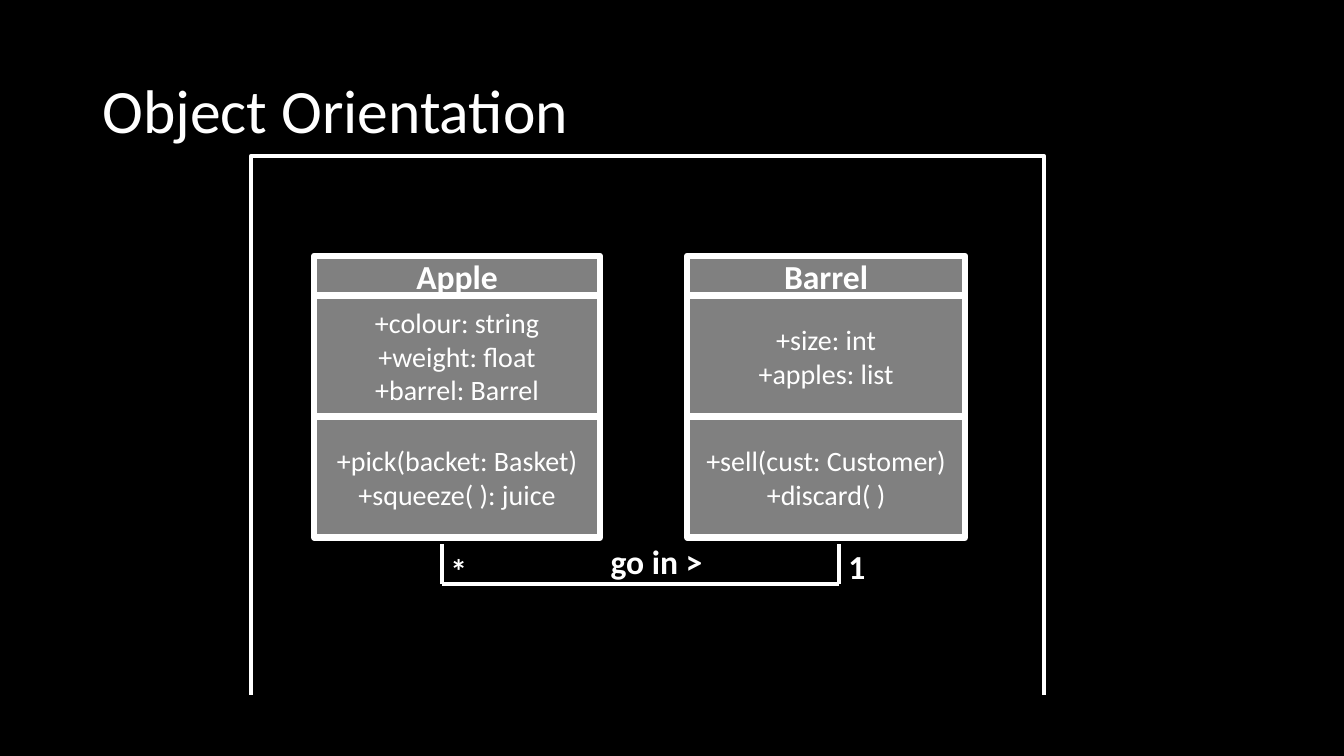
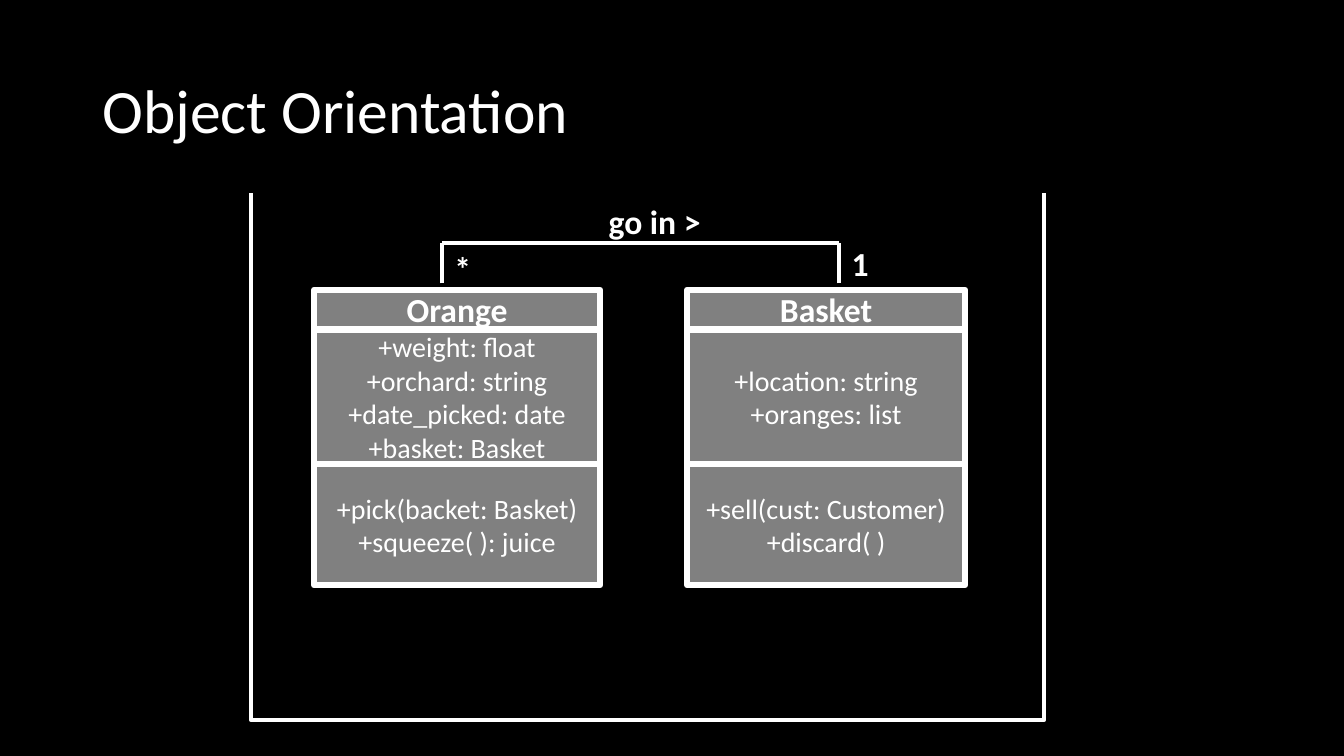
from pptx import Presentation
from pptx.dml.color import RGBColor
from pptx.enum import shapes, text
from pptx.oxml.ns import qn
from pptx.util import Cm, Pt

BLACK, WHITE, GREY = "000000", "FFFFFF", "808080"
FONT = "Calibri"
TITLE = "Object Orientation"
FRAME = (6.32, 3.94, 20, 14.2)
COLS = [(7.92, 7.2), (17.32, 7)]
ENDS = (11.13, 21.15)
PICK = ["+pick(backet: Basket)", "+squeeze( ): juice"]
SELL = ["+sell(cust: Customer)", "+discard( )"]

SLIDES = [
    {
        "classes": [
            (["Apple"], ["+colour: string", "+weight: float", "+barrel: Barrel"], PICK),
            (["Barrel"], ["+size: int", "+apples: list"], SELL),
        ],
        "top": 6.45,
        "rows": (1, 3.05, 3.05),
        "link": (13.72, 14.71),
        "labels": [("*", 11.1, 13.72, 0.94), ("1", 21.13, 13.64, 0.94),
                   ("go in >", 15.14, 13.51, 2.84)],
        "mask": (5.13, 17.53, 22.2, 1.19),
    },
    {
        "classes": [
            (["Orange"], ["+weight: float", "+orchard: string",
                          "+date_picked: date", "+basket: Basket"], PICK),
            (["Basket"], ["+location: string", "+oranges: list"], SELL),
        ],
        "top": 7.3,
        "rows": (1, 3.4, 3.05),
        "link": (7.14, 6.12),
        "labels": [("*", 11.2, 6.12, 0.94), ("1", 21.21, 5.99, 0.94),
                   ("go in >", 15.09, 4.93, 2.84)],
        "mask": (5.84, 3.66, 22.2, 1.19),
    },
]


def color(code):
    return RGBColor.from_string(code)


def write(shape, lines, size, bold=False, align=text.PP_ALIGN.LEFT):
    frame = shape.text_frame
    frame.text = "\n".join(lines)
    for para in frame.paragraphs:
        para.alignment = align
        for run in para.runs:
            font = run.font
            font.name, font.size, font.bold = FONT, Pt(size), bold
            font.color.rgb = color(WHITE)
    return frame


def box(slide, area, fill, line, width):
    shape = slide.shapes.add_shape(shapes.MSO_SHAPE.RECTANGLE, *map(Cm, area))
    shape.shadow.inherit = False
    if fill:
        shape.fill.solid()
        shape.fill.fore_color.rgb = color(fill)
    else:
        shape.fill.background()
    shape.line.color.rgb = color(line)
    shape.line.width = Pt(width)
    return shape


def rule(slide, *ends):
    line = slide.shapes.add_connector(shapes.MSO_CONNECTOR.STRAIGHT, *map(Cm, ends))
    line.line.color.rgb = color(WHITE)
    line.line.width = Pt(3)
    props = line._element.spPr
    props.append(props.makeelement(qn("a:effectLst"), {}))


def title(slide):
    shape = slide.shapes.add_textbox(Cm(2.33), Cm(1.01), Cm(29.21), Cm(3.68))
    frame = write(shape, [TITLE], 44)
    frame.word_wrap = True
    frame.vertical_anchor = text.MSO_ANCHOR.MIDDLE
    frame.paragraphs[0].line_spacing = 0.9


def table(slide, col, parts, top, rows):
    left, width = col
    for row, (lines, height) in enumerate(zip(parts, rows)):
        head = row == 0
        cell = box(slide, (left, top, width, height), GREY, WHITE, 4.5)
        frame = write(cell, lines, 24 if head else 20, head, text.PP_ALIGN.CENTER)
        frame.vertical_anchor = text.MSO_ANCHOR.MIDDLE
        top += height


def link(slide, near, bar):
    rule(slide, ENDS[1], bar, ENDS[0], bar)
    for x in ENDS:
        rule(slide, x, near, x, bar)


def label(slide, words, left, top, width):
    shape = slide.shapes.add_textbox(Cm(left), Cm(top), Cm(width), Cm(1.28))
    frame = write(shape, [words], 24, True)
    frame.word_wrap = False
    frame.auto_size = text.MSO_AUTO_SIZE.SHAPE_TO_FIT_TEXT


def main():
    deck = Presentation()
    deck.slide_width, deck.slide_height = Cm(33.87), Cm(19.05)
    back = deck.slide_master.background.fill
    back.solid()
    back.fore_color.rgb = color(BLACK)
    for data in SLIDES:
        slide = deck.slides.add_slide(deck.slide_layouts[6])
        title(slide)
        box(slide, FRAME, None, WHITE, 3)
        for col, parts in zip(COLS, data["classes"]):
            table(slide, col, parts, data["top"], data["rows"])
        link(slide, *data["link"])
        for item in data["labels"]:
            label(slide, *item)
        box(slide, data["mask"], BLACK, BLACK, 1)
    deck.save("out.pptx")


if __name__ == "__main__":
    main()
